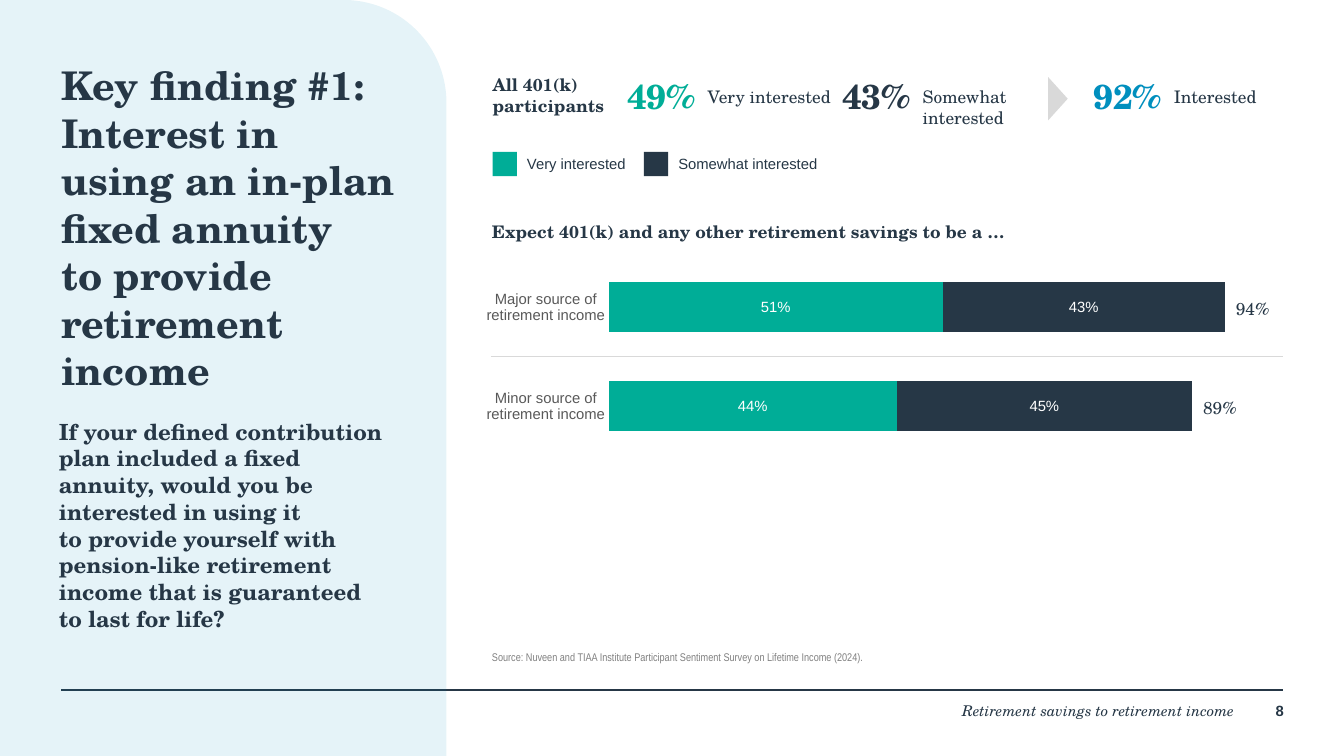
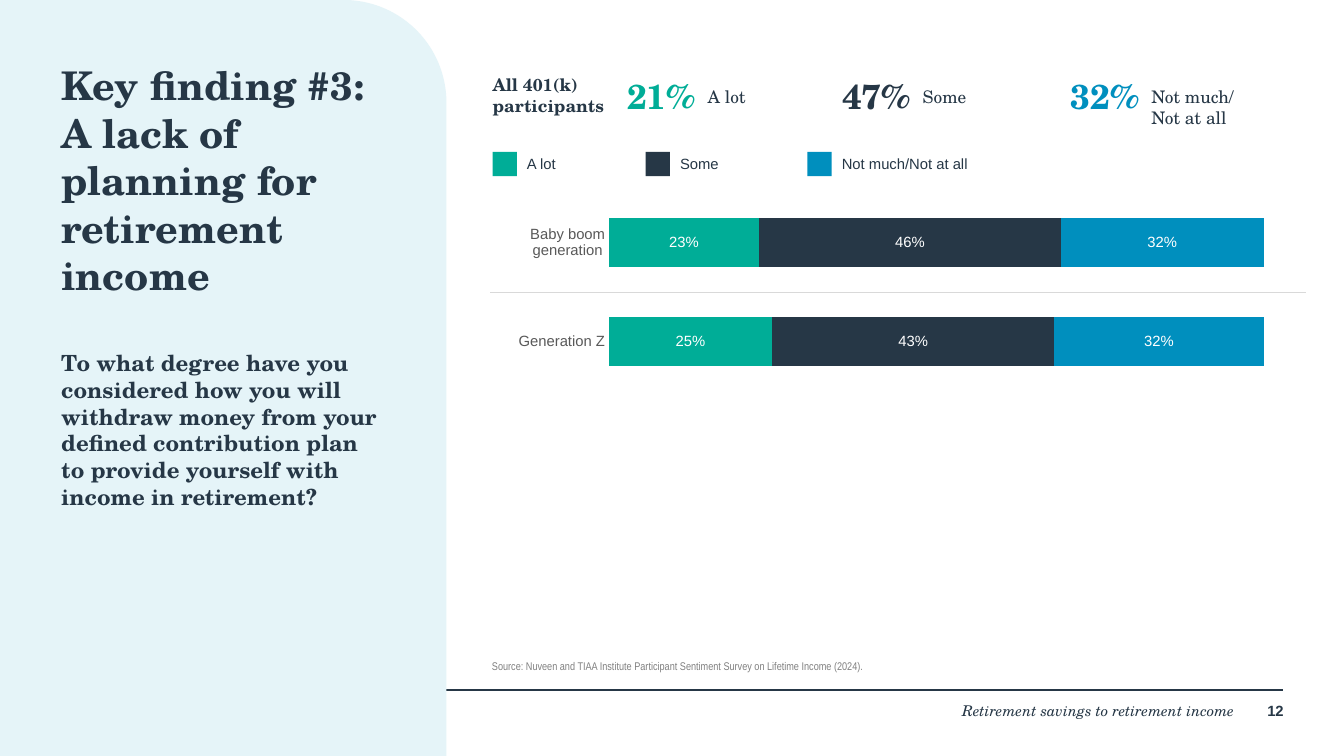
"""Build two survey finding slides on in-plan annuities and retirement planning."""
from dataclasses import dataclass

from lxml import etree
from pptx import Presentation
from pptx import util as u
from pptx.chart import data as chart_data
from pptx.dml.color import RGBColor
from pptx.enum import chart as charts, shapes, text
from pptx.oxml import ns

FINDINGS = [
    {
        "page": "8",
        "title": "Key finding #1:\nInterest in\nusing an in-plan fixed annuity\nto provide retirement income",
        "question": "If your defined contribution plan included a fixed annuity, "
                    "would you be interested in using it\nto provide yourself with "
                    "pension-like retirement income that is guaranteed\nto last for life?",
        "question_box": (1.68, 11.94, 9.35, 5.61),
        "panel": ("008FBE", 10),
        "stats": [("49%", "Very interested", 17.91, 3.58, "teal"),
                  ("43%", "Somewhat interested", 24.05, 2.87, "navy"),
                  ("92%", "Interested", 31.22, 3.18, "blue")],
        "arrow": True,
        "legend": [("Very interested", 14.07, 3.0, "teal"),
                   ("Somewhat interested", 18.39, 4.2, "navy")],
        "heading": "Expect 401(k) and any other retirement savings to be a …",
        "categories": ["Minor source of retirement income", "Major source of retirement income"],
        "series": [(0.44, 0.51), (0.45, 0.43)],
        "totals": True,
        "chart_top": 6.68,
        "divider": (14.02, 36.63),
        "source_bottom": 18.95,
    },
    {
        "page": "12",
        "title": "Key finding #3:\nA lack of\nplanning for retirement\nincome",
        "question": "To what degree have you considered how you will withdraw money "
                    "from your defined contribution plan to provide yourself with "
                    "income in retirement?",
        "question_box": (1.75, 9.98, 9.3, 4.9),
        "panel": ("E5F4F8", 100),
        "stats": [("21%", "A lot", 17.91, 3.58, "teal"),
                  ("47%", "Some", 24.05, 2.87, "navy"),
                  ("32%", "Not much/\nNot at all", 30.58, 3.4, "blue")],
        "arrow": False,
        "legend": [("A lot", 14.07, 1.4, "teal"),
                   ("Some", 18.44, 1.6, "navy"),
                   ("Not much/Not at all", 23.06, 4.2, "blue")],
        "heading": None,
        "categories": ["Generation Z", "Baby boom generation"],
        "series": [(0.25, 0.23), (0.43, 0.46), (0.32, 0.32)],
        "totals": False,
        "chart_top": 4.83,
        "divider": (14.0, 37.29),
        "source_bottom": 19.2,
    },
]
GROUP = "All 401(k) participants"
FOOTER = "Retirement savings to retirement income"
SOURCE = "Source: Nuveen and TIAA Institute Participant Sentiment Survey on Lifetime Income (2024)."


@dataclass(frozen=True)
class Theme:
    """Colours, fonts and type sizes."""
    teal: str = "00AD97"
    navy: str = "263746"
    blue: str = "008FBE"
    white: str = "FFFFFF"
    label: str = "595959"
    muted: str = "808080"
    rule: str = "D9D9D9"
    serif: str = "TeX Gyre Schola"
    sans: str = "Arial"
    narrow: str = "Arial Narrow"
    title: int = 32
    stat: int = 28
    question: int = 18
    body: int = 14
    small: int = 12
    source: int = 9


THEME = Theme()
STYLES = {
    "title": {"name": THEME.serif, "size": u.Pt(THEME.title), "bold": True},
    "question": {"name": THEME.serif, "size": u.Pt(THEME.question), "bold": True},
    "stat": {"name": THEME.serif, "size": u.Pt(THEME.stat), "bold": True},
    "heading": {"name": THEME.serif, "size": u.Pt(THEME.body), "bold": True},
    "body": {"name": THEME.serif, "size": u.Pt(THEME.body)},
    "footer": {"name": THEME.serif, "size": u.Pt(THEME.small), "italic": True},
    "page": {"name": THEME.sans, "size": u.Pt(THEME.small), "bold": True},
    "small": {"name": THEME.sans, "size": u.Pt(THEME.small)},
    "source": {"name": THEME.narrow, "size": u.Pt(THEME.source)},
}
CHART_LEFT, CHART_WIDTH, CHART_HEIGHT = 13.64, 23.39, 6.96
PLOT = {"x": 0.16, "y": 0.098, "w": 0.8, "h": 0.813}


def set_values(target, values):
    """Set each named attribute on the target."""
    for name, value in values.items():
        setattr(target, name, value)


def style_font(font, style, color):
    """Apply a named text style and a colour."""
    set_values(font, STYLES[style])
    font.color.rgb = RGBColor.from_string(color)


def add_text(slide, words, box, style, color=THEME.navy,
             align=text.PP_ALIGN.LEFT, anchor=text.MSO_ANCHOR.TOP):
    """Add a text box without margins; box is in centimetres."""
    frame = slide.shapes.add_textbox(*map(u.Cm, box)).text_frame
    set_values(frame, {"word_wrap": True, "vertical_anchor": anchor, "margin_left": 0,
                       "margin_top": 0, "margin_right": 0, "margin_bottom": 0})
    paragraph = frame.paragraphs[0]
    paragraph.text = words
    paragraph.alignment = align
    for run in paragraph.runs:
        style_font(run.font, style, color)


def add_block(slide, kind, box, color):
    """Add a filled preset shape without outline."""
    shape = slide.shapes.add_shape(kind, *map(u.Cm, box))
    shape.shadow.inherit = False
    shape.fill.solid()
    shape.fill.fore_color.rgb = RGBColor.from_string(color)
    shape.line.fill.background()
    return shape


def add_rule(slide, left, right, top, color, weight):
    """Add a horizontal line."""
    line = slide.shapes.add_connector(shapes.MSO_CONNECTOR.STRAIGHT,
                                      *map(u.Cm, (left, top, right, top)))
    line.line.color.rgb = RGBColor.from_string(color)
    line.line.width = u.Pt(weight)
    etree.SubElement(line.element.spPr, ns.qn("a:effectLst"))


def add_frame(slide, finding):
    """Add the footer, side panel, title, question and source."""
    right = text.PP_ALIGN.RIGHT
    add_text(slide, finding["page"], (35.64, 20.04, 1.02, 0.84), "page", align=right)
    add_rule(slide, 1.75, 36.63, 19.71, THEME.navy, 2)
    add_text(slide, FOOTER, (13.51, 20.04, 21.74, 1.02), "footer", align=right)
    color, opacity = finding["panel"]
    panel = add_block(slide, shapes.MSO_SHAPE.ROUND_1_RECTANGLE, (0, 0, 12.75, 21.59), color)
    panel.adjustments[0] = 0.23
    if opacity < 100:
        fill_color = panel.element.spPr.find(ns.qn("a:solidFill"))[0]
        etree.SubElement(fill_color, ns.qn("a:alpha"), val=str(opacity * 1000))
    add_text(slide, finding["title"], (1.75, 1.75, 10.9, 2.87), "title")
    add_text(slide, finding["question"], finding["question_box"], "question")
    add_text(slide, SOURCE, (14.05, finding["source_bottom"] - 0.51, 11.06, 0.51),
             "source", THEME.muted, anchor=text.MSO_ANCHOR.BOTTOM)


def add_summary(slide, finding):
    """Add the overall percentages and the legend."""
    add_text(slide, GROUP, (14.07, 2.13, 3.71, 1.37), "heading")
    for figure, words, left, width, color in finding["stats"]:
        add_text(slide, figure, (left, 2.13, 2.31, 1.37), "stat", getattr(THEME, color))
        add_text(slide, words, (left + 2.3, 2.46, width, 0.69), "body")
    if finding["arrow"]:
        arrow = add_block(slide, shapes.MSO_SHAPE.ISOSCELES_TRIANGLE,
                          (29.59, 2.54, 1.24, 0.56), THEME.rule)
        arrow.rotation = 90
    for words, left, width, color in finding["legend"]:
        add_block(slide, shapes.MSO_SHAPE.RECTANGLE, (left, 4.34, 0.69, 0.69),
                  getattr(THEME, color))
        add_text(slide, words, (left + 0.98, 4.42, width, 0.51), "small")


def place_plot(chart):
    """Fix the inner plot area inside the chart."""
    area = chart.element.find(".//" + ns.qn("c:plotArea"))
    for old in area.findall(ns.qn("c:layout")):
        area.remove(old)
    layout = etree.Element(ns.qn("c:layout"))
    manual = etree.SubElement(layout, ns.qn("c:manualLayout"))
    settings = {"layoutTarget": "inner", "xMode": "edge", "yMode": "edge", **PLOT}
    for name, value in settings.items():
        etree.SubElement(manual, ns.qn(f"c:{name}"), val=str(value))
    area.insert(0, layout)


def add_bars(slide, finding):
    """Add the stacked bar chart."""
    data = chart_data.CategoryChartData(number_format="0%")
    data.categories = finding["categories"]
    for number, values in enumerate(finding["series"], 1):
        data.add_series(f"Series {number}", values)
    box = (CHART_LEFT, finding["chart_top"], CHART_WIDTH, CHART_HEIGHT)
    chart = slide.shapes.add_chart(charts.XL_CHART_TYPE.BAR_STACKED,
                                   *map(u.Cm, box), data).chart
    set_values(chart, {"has_legend": False, "has_title": False})
    style_font(chart.font, "small", THEME.label)
    set_values(chart.value_axis, {"minimum_scale": 0, "maximum_scale": 1,
                                  "has_major_gridlines": False, "visible": False})
    axis = chart.category_axis
    set_values(axis, {"major_tick_mark": charts.XL_TICK_MARK.NONE,
                      "minor_tick_mark": charts.XL_TICK_MARK.NONE})
    axis.format.line.fill.background()
    style_font(axis.tick_labels.font, "small", THEME.label)
    plot = chart.plots[0]
    set_values(plot, {"gap_width": 99, "overlap": 100, "vary_by_categories": False})
    for series, color in zip(plot.series, (THEME.teal, THEME.navy, THEME.blue)):
        series.format.fill.solid()
        series.format.fill.fore_color.rgb = RGBColor.from_string(color)
        labels = series.data_labels
        set_values(labels, {"show_value": True, "number_format": "0%",
                            "number_format_is_linked": False,
                            "position": charts.XL_LABEL_POSITION.CENTER})
        style_font(labels.font, "small", THEME.white)
    place_plot(chart)


def add_totals(slide, finding):
    """Add the sum of each bar just right of its end."""
    plot_left = CHART_LEFT + PLOT["x"] * CHART_WIDTH
    plot_top = finding["chart_top"] + PLOT["y"] * CHART_HEIGHT
    row = PLOT["h"] * CHART_HEIGHT / len(finding["categories"])
    totals = [sum(values) for values in zip(*finding["series"])]
    for index, total in enumerate(reversed(totals)):
        left = plot_left + PLOT["w"] * CHART_WIDTH * total + 0.32
        middle = plot_top + row * (index + 0.5) + 0.04
        add_text(slide, f"{total:.0%}", (left, middle - 0.3, 1.2, 0.6), "body",
                 anchor=text.MSO_ANCHOR.MIDDLE)


def add_finding(presentation, finding):
    """Add one finding slide."""
    slide = presentation.slides.add_slide(presentation.slide_layouts[6])
    add_frame(slide, finding)
    add_bars(slide, finding)
    if finding["heading"]:
        add_text(slide, finding["heading"], (14.05, 6.32, 19.18, 0.86), "heading")
    if finding["totals"]:
        add_totals(slide, finding)
    middle = finding["chart_top"] + (PLOT["y"] + PLOT["h"] / 2) * CHART_HEIGHT
    add_rule(slide, *finding["divider"], middle, THEME.rule, 0.75)
    add_summary(slide, finding)


def main():
    """Build and save the presentation."""
    presentation = Presentation()
    set_values(presentation, {"slide_width": u.Cm(38.38), "slide_height": u.Cm(21.59)})
    for finding in FINDINGS:
        add_finding(presentation, finding)
    presentation.save("out.pptx")


if __name__ == "__main__":
    main()
